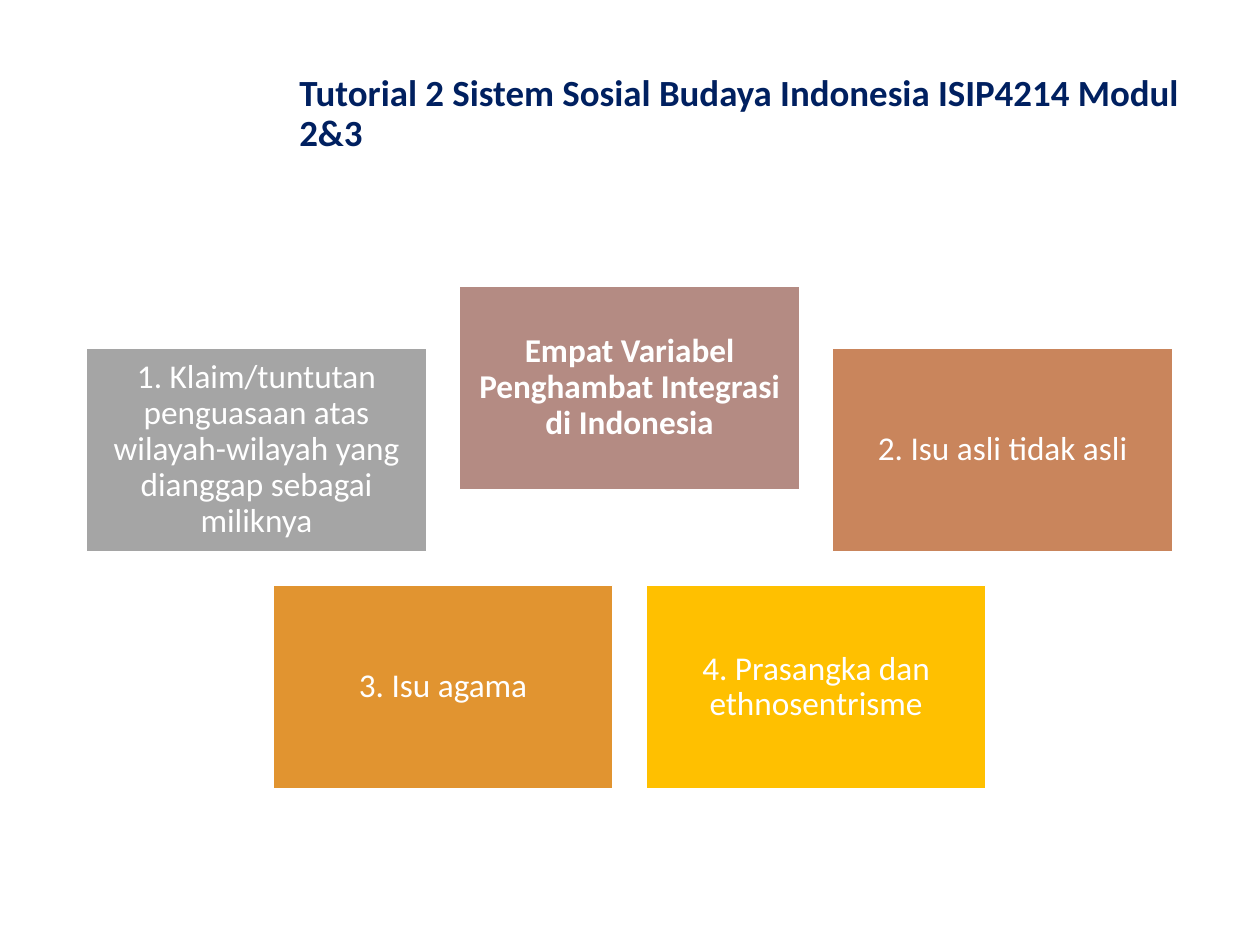
from dataclasses import dataclass

from pptx import Presentation
from pptx import util as u
from pptx.dml import color
from pptx.enum import shapes, text

HUES = {
    "white": "FFFFFF",
    "navy": "002060",
    "gray": "A5A5A5",
    "rose": "B48B83",
    "clay": "C9855C",
    "amber": "E19430",
    "gold": "FFC000",
}
FONT = "Calibri"
LEFT, STEP = 0.98, 4.21
WIDE, HIGH = 3.83, 2.3


@dataclass
class Card:
    col: float
    top: float
    hue: str
    words: str
    bold: bool = False


CARDS = [
    Card(0, 3.93, "gray", "1. Klaim/tuntutan penguasaan atas wilayah-wilayah yang dianggap sebagai miliknya"),
    Card(1, 3.23, "rose", "Empat Variabel Penghambat Integrasi di Indonesia", True),
    Card(2, 3.93, "clay", "2. Isu asli tidak asli"),
    Card(0.5, 6.61, "amber", "3. Isu agama"),
    Card(1.5, 6.61, "gold", "4. Prasangka dan ethnosentrisme"),
]


def tint(name: str) -> color.RGBColor:
    return color.RGBColor.from_string(HUES[name])


def write(shape, words: str, size: int, hue: str, bold: bool, align) -> None:
    frame = shape.text_frame
    frame.word_wrap = True
    frame.vertical_anchor = text.MSO_ANCHOR.MIDDLE
    para = frame.paragraphs[0]
    para.alignment = align
    para.line_spacing = 0.9
    run = para.add_run()
    run.text = words
    run.font.name = FONT
    run.font.size = u.Pt(size)
    run.font.bold = bold
    run.font.color.rgb = tint(hue)


def draw(slide, card: Card) -> None:
    box = slide.shapes.add_shape(
        shapes.MSO_SHAPE.RECTANGLE,
        u.Inches(LEFT + card.col * STEP), u.Inches(card.top),
        u.Inches(WIDE), u.Inches(HIGH),
    )
    box.shadow.inherit = False
    box.fill.solid()
    box.fill.fore_color.rgb = tint(card.hue)
    box.line.color.rgb = tint("white")
    box.line.width = u.Pt(1)
    frame = box.text_frame
    frame.margin_left = frame.margin_right = u.Inches(0.11)
    frame.margin_top = frame.margin_bottom = u.Inches(0.11)
    write(box, card.words, 27, "white", card.bold, text.PP_ALIGN.CENTER)


def main() -> None:
    """Build the slide of four barriers to integration."""
    deck = Presentation()
    deck.slide_width, deck.slide_height = u.Inches(14.22), u.Inches(10.67)
    slide = deck.slides.add_slide(deck.slide_layouts[6])
    for card in CARDS:
        draw(slide, card)
    title = slide.shapes.add_textbox(
        u.Inches(3.28), u.Inches(0.67), u.Inches(10.9), u.Inches(1.25)
    )
    write(title, "Tutorial 2 Sistem Sosial Budaya Indonesia ISIP4214 Modul 2&3",
          30, "navy", True, text.PP_ALIGN.LEFT)
    deck.save("out.pptx")


if __name__ == "__main__":
    main()
